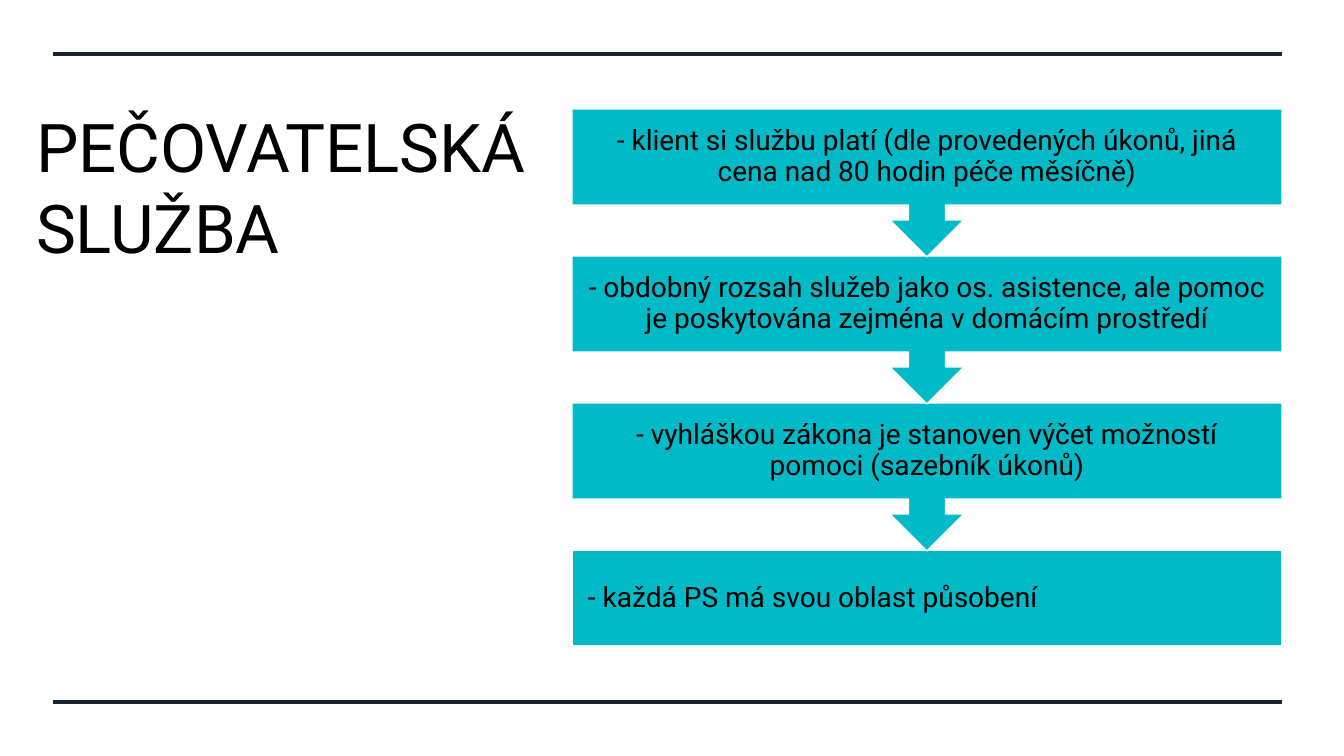
from pptx import Presentation
from pptx import util as u
from pptx.dml.color import RGBColor
from pptx.enum import shapes, text
from pptx.oxml.ns import qn
from lxml import etree

COLORS = {"rule": "182230", "step": "00BAC8", "edge": "FFFFFF", "ink": "000000"}
FONT = "Roboto"
STEPS = [
    "- klient si službu platí (dle provedených úkonů, jiná cena nad 80 hodin péče měsíčně)",
    "- obdobný rozsah služeb jako os. asistence, ale pomoc je poskytována zejména v domácím prostředí",
    "- vyhláškou zákona je stanoven výčet možností pomoci (sazebník úkonů)",
    "- každá PS má svou oblast působení",
]


def px(n):
    """Turn pixels into EMU."""
    return u.Emu(round(n * 914400 / 100.8))


def color(name):
    """Return a named colour."""
    return RGBColor.from_string(COLORS[name])


def write(sp, content, size, align, anchor, spacing=1.0, inset=None):
    """Fill a shape with one formatted paragraph."""
    tf = sp.text_frame
    tf.word_wrap = True
    tf.auto_size = text.MSO_AUTO_SIZE.NONE
    tf.vertical_anchor = anchor
    if inset is not None:
        tf.margin_left = tf.margin_right = tf.margin_top = tf.margin_bottom = px(inset)
    p = tf.paragraphs[0]
    p.alignment = align
    p.line_spacing = spacing
    p.space_before = u.Pt(0)
    r = p.add_run()
    r.text = content
    r.font.name = FONT
    r.font.size = u.Pt(size)
    r.font.color.rgb = color("ink")


def add_rules(s, left, right, tops):
    """Draw the horizontal rules that frame the slide."""
    for y in tops:
        rule = s.shapes.add_connector(shapes.MSO_CONNECTOR.STRAIGHT, px(left), px(y), px(right), px(y))
        rule.line.color.rgb = color("rule")
        rule.line.width = u.Pt(2.25)
        etree.SubElement(rule._element.spPr, qn("a:effectLst"))


def add_title(s, x, y, w, h):
    """Place and format the title."""
    sp = s.shapes.title
    sp.left, sp.top, sp.width, sp.height = px(x), px(y), px(w), px(h)
    write(sp, "PEČOVATELSKÁ SLUŽBA", 48, text.PP_ALIGN.LEFT, text.MSO_ANCHOR.BOTTOM)


def add_steps(s, x, y, w, h):
    """Stack the steps from the bottom up, each pointing to the next."""
    pitch, box_h, callout_h = 147, 96, 148
    last = len(STEPS) - 1
    for i in range(last, -1, -1):
        if i == last:
            kind, height, align = shapes.MSO_SHAPE.RECTANGLE, h - last * pitch, text.PP_ALIGN.LEFT
        else:
            kind, height, align = shapes.MSO_SHAPE.DOWN_ARROW_CALLOUT, callout_h, text.PP_ALIGN.CENTER
        sp = s.shapes.add_shape(kind, px(x), px(y + i * pitch), px(w), px(height))
        if i < last:
            sp.adjustments[3] = box_h / callout_h
        sp.shadow.inherit = False
        sp.fill.solid()
        sp.fill.fore_color.rgb = color("step")
        sp.line.color.rgb = color("edge")
        sp.line.width = u.Pt(1)
        write(sp, STEPS[i], 20, align, text.MSO_ANCHOR.MIDDLE, spacing=0.9, inset=16)


def main():
    """Build and save the slide."""
    prs = Presentation()
    prs.slide_width, prs.slide_height = px(1344), px(756)
    s = prs.slides.add_slide(prs.slide_layouts[5])
    add_rules(s, 53, 1282, (54, 702))
    add_title(s, 26, 86, 537, 186)
    add_steps(s, 572, 109, 710, 537)
    prs.save("out.pptx")


if __name__ == "__main__":
    main()
